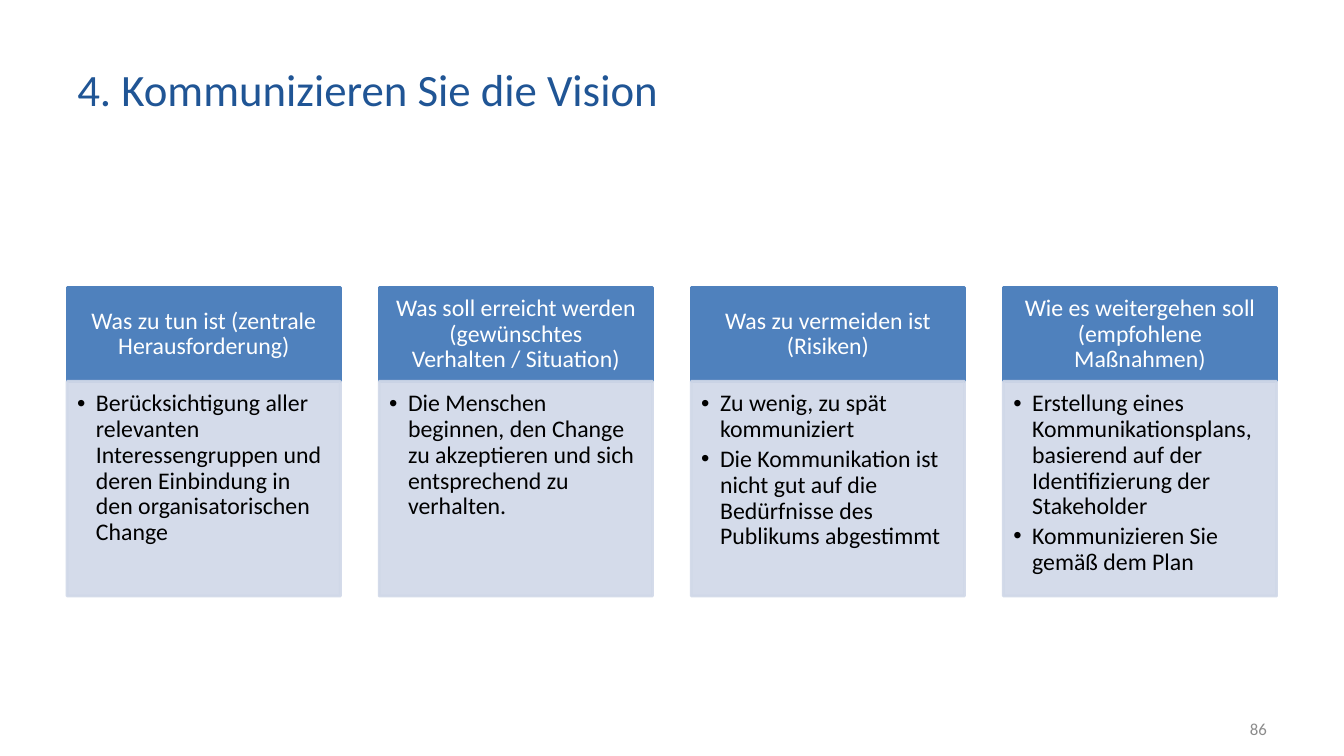
import pptx
import pptx.util
import pptx.dml.color
import pptx.enum.shapes
import pptx.enum.text
import pptx.oxml.ns
import lxml.etree

Pt = pptx.util.Pt
Align = pptx.enum.text.PP_ALIGN
Anchor = pptx.enum.text.MSO_ANCHOR
qn = pptx.oxml.ns.qn

TITLE = "4. Kommunizieren Sie die Vision"
PAGE = "86"
CARDS = [
    ("Was zu tun ist (zentrale Herausforderung)",
     ["Berücksichtigung aller relevanten Interessengruppen und deren "
      "Einbindung in den organisatorischen Change"]),
    ("Was soll erreicht werden (gewünschtes Verhalten / Situation)",
     ["Die Menschen beginnen, den Change zu akzeptieren und sich "
      "entsprechend zu verhalten."]),
    ("Was zu vermeiden ist (Risiken)",
     ["Zu wenig, zu spät kommuniziert",
      "Die Kommunikation ist nicht gut auf die Bedürfnisse des Publikums "
      "abgestimmt"]),
    ("Wie es weitergehen soll (empfohlene Maßnahmen)",
     ["Erstellung eines Kommunikationsplans, basierend auf der "
      "Identifizierung der Stakeholder",
      "Kommunizieren Sie gemäß dem Plan"]),
]
COLORS = {"title": "205595", "head": "4F81BD", "body": "D0D8E8",
          "light": "FFFFFF", "dark": "000000", "page": "8C8C8C"}
FONT = "Calibri"
LEFT, TOP, WIDTH, STEP = 48, 205.2, 195.2, 222.9
HEAD, BODY = 67.2, 153.4
INDENT = 13.5


def rgb(name):
    return pptx.dml.color.RGBColor.from_string(COLORS[name])


def style(par, size, color, align):
    par.alignment = align
    par.font.name = FONT
    par.font.size = Pt(size)
    par.font.color.rgb = rgb(color)


def fade(fill, share):
    """Set the opacity, in percent, of a solid fill."""
    tint = fill._xPr.find(qn("a:solidFill"))[0]
    lxml.etree.SubElement(tint, qn("a:alpha"), val=str(share * 1000))


def bullet(par):
    props = par._p.get_or_add_pPr()
    props.set("marL", str(Pt(INDENT)))
    props.set("indent", str(-Pt(INDENT)))
    lxml.etree.SubElement(props, qn("a:buFont"), typeface="Arial")
    lxml.etree.SubElement(props, qn("a:buChar"), char="•")


def panel(slide, box, color, insets, anchor):
    """Add a filled rectangle and return it with its text frame."""
    kind = pptx.enum.shapes.MSO_SHAPE.RECTANGLE
    shape = slide.shapes.add_shape(kind, *map(Pt, box))
    shape.shadow.inherit = False
    shape.fill.solid()
    shape.fill.fore_color.rgb = rgb(color)
    shape.line.width = Pt(2)
    shape.line.color.rgb = rgb(color)
    frame = shape.text_frame
    frame.word_wrap = True
    frame.vertical_anchor = anchor
    (frame.margin_left, frame.margin_top,
     frame.margin_right, frame.margin_bottom) = map(Pt, insets)
    return shape, frame


def card(slide, left, head, items):
    _, frame = panel(slide, (left, TOP, WIDTH, HEAD), "head",
                     (9.6, 5.5, 9.6, 5.5), Anchor.MIDDLE)
    par = frame.paragraphs[0]
    par.text = head
    par.line_spacing = 0.9
    style(par, 17, "light", Align.CENTER)

    shape, frame = panel(slide, (left, TOP + HEAD, WIDTH, BODY), "body",
                         (7.2, 7.2, 9.6, 10.8), Anchor.TOP)
    fade(shape.fill, 90)
    fade(shape.line.fill, 90)
    for i, item in enumerate(items):
        par = frame.add_paragraph() if i else frame.paragraphs[0]
        par.text = item
        bullet(par)
        par.line_spacing = 0.9
        par.space_after = Pt(3)
        style(par, 17, "dark", Align.LEFT)


def main():
    deck = pptx.Presentation()
    deck.slide_width, deck.slide_height = Pt(960), Pt(540)
    slide = deck.slides.add_slide(deck.slide_layouts[5])

    title = slide.shapes.title
    title.left, title.top, title.width, title.height = map(
        Pt, (48, 21.6, 713.5, 82.8))
    title.text_frame.text = TITLE
    title.text_frame.vertical_anchor = Anchor.MIDDLE
    style(title.text_frame.paragraphs[0], 32, "title", Align.LEFT)

    for i, (head, items) in enumerate(CARDS):
        card(slide, LEFT + i * STEP, head, items)

    page = slide.shapes.add_textbox(*map(Pt, (688, 506, 224, 28.8)))
    page.text_frame.word_wrap = True
    page.text_frame.vertical_anchor = Anchor.MIDDLE
    page.text_frame.text = PAGE
    style(page.text_frame.paragraphs[0], 12, "page", Align.RIGHT)

    deck.save("out.pptx")


if __name__ == "__main__":
    main()
